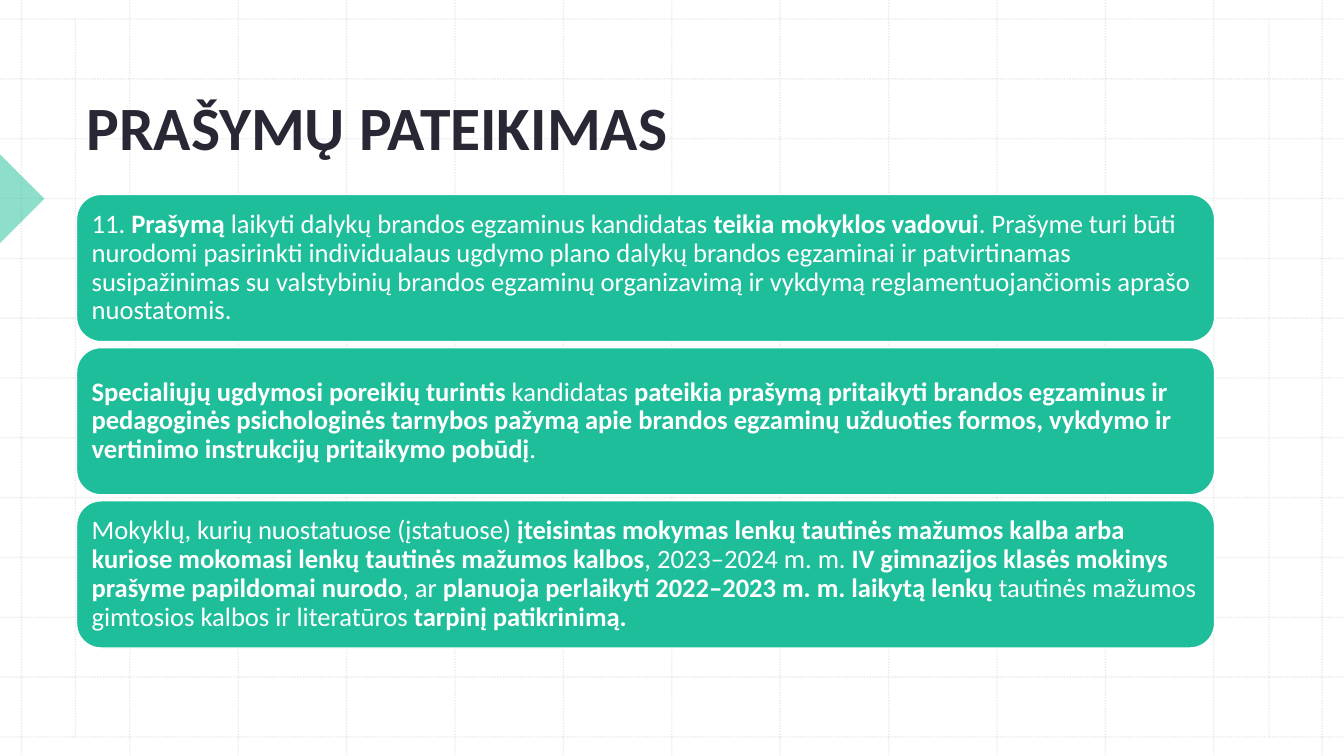
import dataclasses

import pptx
import pptx.dml.color
import pptx.enum.dml
import pptx.enum.shapes
import pptx.enum.text
import pptx.oxml
import pptx.oxml.ns
import pptx.util

Cm = pptx.util.Cm
Pt = pptx.util.Pt
Shape = pptx.enum.shapes.MSO_SHAPE
Anchor = pptx.enum.text.MSO_ANCHOR


@dataclasses.dataclass(frozen=True)
class Theme:
    font: str = "Calibri"
    green: str = "1EBE9B"
    dark: str = "2A2735"
    white: str = "FFFFFF"
    grid: str = "BCBCBC"
    head: int = 44
    body: int = 19


THEME = Theme()
WIDE, HIGH = 33.87, 19.05
LEFT, SPAN = 1.93, 28.68

# Bold parts stand between asterisks
CARDS = [
    "11. *Prašymą* laikyti dalykų brandos egzaminus kandidatas "
    "*teikia mokyklos vadovui*. Prašyme turi būti nurodomi pasirinkti "
    "individualaus ugdymo plano dalykų brandos egzaminai ir patvirtinamas "
    "susipažinimas su valstybinių brandos egzaminų organizavimą ir vykdymą "
    "reglamentuojančiomis aprašo nuostatomis.",
    "*Specialiųjų ugdymosi poreikių turintis* kandidatas "
    "*pateikia prašymą pritaikyti brandos egzaminus ir pedagoginės "
    "psichologinės tarnybos pažymą apie brandos egzaminų užduoties formos, "
    "vykdymo ir vertinimo instrukcijų pritaikymo pobūdį*.",
    "Mokyklų, kurių nuostatuose (įstatuose) *įteisintas mokymas lenkų "
    "tautinės mažumos kalba arba kuriose mokomasi lenkų tautinės mažumos "
    "kalbos*, 2023–2024 m. m. *IV gimnazijos klasės mokinys prašyme "
    "papildomai nurodo*, ar *planuoja perlaikyti 2022–2023 m. m. laikytą "
    "lenkų* tautinės mažumos gimtosios kalbos ir literatūros "
    "*tarpinį patikrinimą.*",
]


def rgb(code):
    return pptx.dml.color.RGBColor.from_string(code)


def fade(item, share):
    """Make the solid colour inside an element partly clear."""
    color = next(item.iter(pptx.oxml.ns.qn("a:srgbClr")))
    alpha = pptx.oxml.parse_xml(
        f'<a:alpha {pptx.oxml.ns.nsdecls("a")} val="{share * 1000}"/>')
    color.append(alpha)


def add_line(slide, x1, y1, x2, y2):
    line = slide.shapes.add_connector(
        pptx.enum.shapes.MSO_CONNECTOR.STRAIGHT,
        Cm(x1), Cm(y1), Cm(x2), Cm(y2))
    line.line.color.rgb = rgb(THEME.grid)
    line.line.width = Pt(1)
    line.line.dash_style = pptx.enum.dml.MSO_LINE.ROUND_DOT
    props = line._element.spPr
    fade(props, 30)
    props.append(pptx.oxml.parse_xml(
        f'<a:effectLst {pptx.oxml.ns.nsdecls("a")}/>'))


def add_grid(slide):
    top, base = 0.48, 18.57
    start, end = 0.54, 33.32
    for i in range(13):
        x = start + i * (end - start) / 12
        y = top + i * (base - top) / 12
        add_line(slide, x, 0, x, HIGH)
        add_line(slide, 0, y, WIDE, y)
    for x in (1.9, 31.98):
        add_line(slide, x, top, x, base)


def add_form(slide, kind, x, y, w, h):
    form = slide.shapes.add_shape(kind, Cm(x), Cm(y), Cm(w), Cm(h))
    form.shadow.inherit = False
    form.fill.solid()
    form.fill.fore_color.rgb = rgb(THEME.green)
    form.line.fill.background()
    return form


def add_mark(slide):
    mark = add_form(slide, Shape.RIGHT_TRIANGLE, -0.79, 4.22, 1.58, 1.58)
    mark.rotation = 225
    fade(mark._element.spPr, 50)


def style(para, size, color):
    para.alignment = pptx.enum.text.PP_ALIGN.LEFT
    para.font.name = THEME.font
    para.font.size = Pt(size)
    para.font.color.rgb = rgb(color)


def add_title(slide, text):
    box = slide.shapes.add_textbox(Cm(LEFT), Cm(2.01), Cm(SPAN), Cm(2.21))
    frame = box.text_frame
    frame.word_wrap = True
    frame.vertical_anchor = Anchor.BOTTOM
    para = frame.paragraphs[0]
    para.text = text
    style(para, THEME.head, THEME.dark)
    para.font.bold = True


def add_card(slide, y, text):
    card = add_form(slide, Shape.ROUNDED_RECTANGLE, LEFT, y, SPAN, 3.71)
    card.line.color.rgb = rgb(THEME.white)
    card.line.width = Pt(1)
    frame = card.text_frame
    frame.word_wrap = True
    frame.vertical_anchor = Anchor.MIDDLE
    frame.margin_left = frame.margin_right = Cm(0.2)
    frame.margin_top = frame.margin_bottom = Cm(0.2)
    para = frame.paragraphs[0]
    style(para, THEME.body, THEME.white)
    para.line_spacing = 0.9
    for i, part in enumerate(text.split("*")):
        if part:
            run = para.add_run()
            run.text = part
            run.font.bold = i % 2 == 1


def main():
    deck = pptx.Presentation()
    deck.slide_width, deck.slide_height = Cm(WIDE), Cm(HIGH)
    slide = deck.slides.add_slide(deck.slide_layouts[6])

    # Backdrop
    add_grid(slide)
    add_mark(slide)

    # Title and cards
    add_title(slide, "PRAŠYMŲ PATEIKIMAS")
    for i, text in enumerate(CARDS):
        add_card(slide, 4.9 + i * 3.86, text)

    deck.save("out.pptx")


if __name__ == "__main__":
    main()
